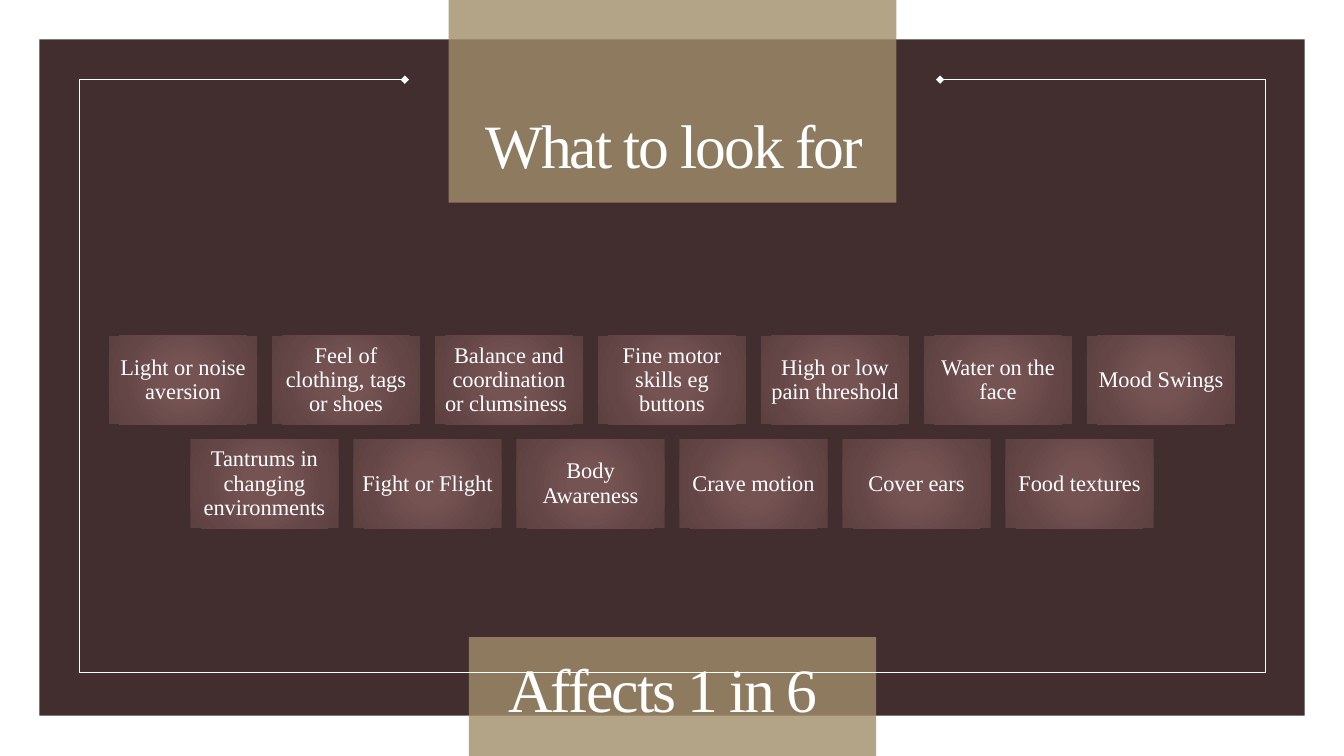
from collections import namedtuple
from dataclasses import dataclass

from lxml.etree import SubElement
from pptx import Presentation
from pptx.dml.color import RGBColor
from pptx.enum.shapes import MSO_SHAPE
from pptx.enum.text import MSO_ANCHOR, PP_ALIGN
from pptx.oxml.ns import qn
from pptx.util import Inches, Pt

Box = namedtuple("Box", "left top width height")


@dataclass(frozen=True)
class Theme:
    font: str = "Times New Roman"
    white: str = "FFFFFF"
    panel: str = "422E2E"
    banner: str = "A28E6A"
    banner_alpha: int = 80
    tile_stops: tuple = ((0, "765353"), (23, "765353"), (69, "644646"), (97, "5D4141"))
    heading_size: float = 44
    heading_spacing: float = -1.5
    tile_size: float = 16
    line_spacing: float = 0.9


THEME = Theme()
SLIDE = Box(0, 0, 13.33, 7.5)
MARGIN = 0.39
PANEL = Box(MARGIN, MARGIN, 12.55, 6.71)
FRAME = Box(0.79, 0.79, 11.76, 5.88)
FRAME_OPENING = 5.31
TOP_BANNER = Box(4.45, 0, 4.44, 2.01)
BOTTOM_BANNER = Box(4.65, 6.32, 4.04, 1.18)
TITLE = Box(4.49, 0.39, 4.39, 1.46)
FOOTING = Box(4.47, 5.79, 4.34, 1.46)
SIGNS = Box(1.08, 3.33, 11.17, 1.91)
SIGN_ROWS = (
    ("Light or noise aversion", "Feel of clothing, tags or shoes",
     "Balance and coordination or clumsiness ", "Fine motor skills eg buttons",
     "High or low pain threshold", "Water on the face", "Mood Swings"),
    ("Tantrums in changing environments", "Fight or Flight", "Body Awareness",
     "Crave motion", "Cover ears", "Food textures"),
)


def inches(box):
    return [Inches(length) for length in box]


def write(shape, text, *, size, anchor, inset=None, spacing=0):
    frame = shape.text_frame
    frame.word_wrap = True
    frame.vertical_anchor = anchor
    if inset is not None:
        frame.margin_left = frame.margin_right = Inches(inset)
        frame.margin_top = frame.margin_bottom = Inches(inset)
    paragraph = frame.paragraphs[0]
    paragraph.alignment = PP_ALIGN.CENTER
    paragraph.line_spacing = THEME.line_spacing
    run = paragraph.add_run()
    run.text = text
    run.font.name = THEME.font
    run.font.size = Pt(size)
    run.font.color.rgb = RGBColor.from_string(THEME.white)
    if spacing:
        run.font._element.set("spc", str(int(spacing * 100)))


def add_block(slide, box, color=None, alpha=100):
    block = slide.shapes.add_shape(MSO_SHAPE.RECTANGLE, *inches(box))
    block.shadow.inherit = False
    block.line.fill.background()
    if color:
        block.fill.solid()
        block.fill.fore_color.rgb = RGBColor.from_string(color)
        if alpha < 100:
            tint = block.fill._xPr.find(".//" + qn("a:srgbClr"))
            SubElement(tint, qn("a:alpha"), val=str(alpha * 1000))
    return block


def radial_fill(shape, stops):
    shape.fill.gradient()
    gradient = shape.fill._xPr.find(qn("a:gradFill"))
    for part in list(gradient):
        gradient.remove(part)
    stop_list = SubElement(gradient, qn("a:gsLst"))
    for position, color in stops:
        stop = SubElement(stop_list, qn("a:gs"), pos=str(position * 1000))
        SubElement(stop, qn("a:srgbClr"), val=color)
    circle = SubElement(gradient, qn("a:path"), {"path": "circle"})
    SubElement(circle, qn("a:fillToRect"), dict.fromkeys("ltrb", "50000"))


def add_frame(slide, box, opening):
    """Outline with a centred opening in its top edge."""
    right, bottom = box.left + box.width, box.top + box.height
    side = (box.width - opening) / 2
    corners = [(right, box.top), (right, bottom), (box.left, bottom),
               (box.left, box.top), (box.left + side, box.top)]
    builder = slide.shapes.build_freeform(
        Inches(right - side), Inches(box.top))
    builder.add_line_segments([(Inches(x), Inches(y)) for x, y in corners], close=False)
    outline = builder.convert_to_shape()
    outline.shadow.inherit = False
    outline.fill.background()
    outline.line.color.rgb = RGBColor.from_string(THEME.white)
    outline.line.width = Pt(1)
    for end in ("a:headEnd", "a:tailEnd"):
        SubElement(outline.line._get_or_add_ln(), qn(end), type="diamond")


def add_backdrop(slide):
    add_block(slide, PANEL, THEME.panel)
    for banner in (TOP_BANNER, BOTTOM_BANNER):
        add_block(slide, banner, THEME.banner, THEME.banner_alpha)
    add_frame(slide, FRAME, FRAME_OPENING)


def add_heading(slide, box, text):
    heading = slide.shapes.add_textbox(*inches(box))
    write(heading, text, size=THEME.heading_size, anchor=MSO_ANCHOR.BOTTOM,
          spacing=THEME.heading_spacing)


def add_signs(slide, box, rows):
    """Rows of equal tiles, each row centred, with gaps a tenth of a tile wide."""
    columns = max(len(row) for row in rows)
    width = box.width / (columns + 0.1 * (columns - 1))
    gap = width / 10
    height = (box.height - gap * (len(rows) - 1)) / len(rows)
    for row_index, row in enumerate(rows):
        indent = (columns - len(row)) * (width + gap) / 2
        for column, sign in enumerate(row):
            tile = add_block(slide, Box(
                box.left + indent + column * (width + gap),
                box.top + row_index * (height + gap), width, height))
            radial_fill(tile, THEME.tile_stops)
            write(tile, sign, size=THEME.tile_size, anchor=MSO_ANCHOR.MIDDLE, inset=0.07)


def main():
    deck = Presentation()
    deck.slide_width, deck.slide_height = Inches(SLIDE.width), Inches(SLIDE.height)
    slide = deck.slides.add_slide(deck.slide_layouts[6])
    add_backdrop(slide)
    add_heading(slide, TITLE, "What to look for")
    add_signs(slide, SIGNS, SIGN_ROWS)
    add_heading(slide, FOOTING, "Affects 1 in 6 ")
    deck.save("out.pptx")


if __name__ == "__main__":
    main()
